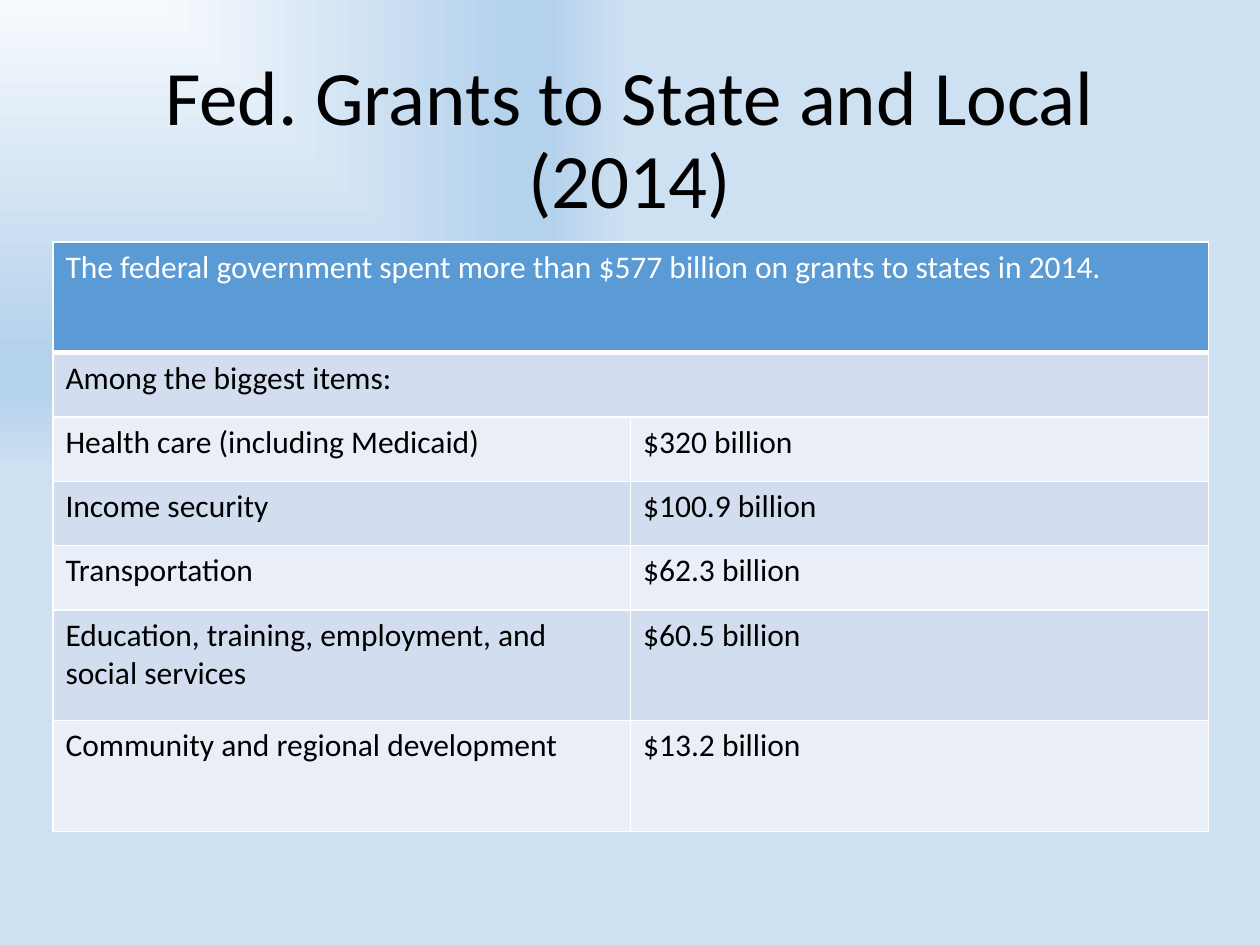
from lxml import etree
from pptx import Presentation
from pptx.dml.color import RGBColor
from pptx.enum import text
from pptx.oxml import ns
from pptx.util import Inches, Pt

WHITE = RGBColor(0xFF, 0xFF, 0xFF)
BLACK = RGBColor(0, 0, 0)
HEADER = RGBColor(0x5B, 0x9B, 0xD5)
BANDS = RGBColor(0xEA, 0xEF, 0xF7), RGBColor(0xD2, 0xDE, 0xEF)
GLOW = [
    (0, RGBColor(0xF7, 0xFA, 0xFD)),
    (74, RGBColor(0xB5, 0xD2, 0xEC)),
    (83, RGBColor(0xB5, 0xD2, 0xEC)),
    (100, RGBColor(0xCE, 0xE1, 0xF2)),
]

TITLE = "Fed. Grants to State and Local (2014)"
ROWS = [
    (0.88, "The federal government spent more than $577 billion on grants to states in 2014."),
    (0.51, "Among the biggest items:"),
    (0.51, "Health care (including Medicaid)", "$320 billion"),
    (0.51, "Income security", "$100.9 billion"),
    (0.51, "Transportation", "$62.3 billion"),
    (0.88, "Education, training, employment, and social services", "$60.5 billion"),
    (0.88, "Community and regional development", "$13.2 billion"),
]


def add(parent, tag, **attrs):
    return etree.SubElement(parent, ns.qn(tag), {k: str(v) for k, v in attrs.items()})


class Deck:
    font = "Calibri"

    def __init__(self, width, height):
        self.prs = Presentation()
        self.prs.slide_width, self.prs.slide_height = Inches(width), Inches(height)
        self.s = self.prs.slides.add_slide(self.prs.slide_layouts[5])

    def background(self, stops):
        self.s.background.fill.gradient()
        grad = self.s.element.find(".//" + ns.qn("a:gradFill"))
        for child in list(grad):
            grad.remove(child)
        gs_list = add(grad, "a:gsLst")
        for pos, color in stops:
            add(add(gs_list, "a:gs", pos=pos * 1000), "a:srgbClr", val=color)
        shade = add(grad, "a:path", path="rect")
        add(shade, "a:fillToRect", r=100000, b=100000)

    def put_text(self, tf, words, size, color):
        p = tf.paragraphs[0]
        r = p.add_run()
        r.text = words
        for name, value in {"name": self.font, "size": Pt(size)}.items():
            setattr(r.font, name, value)
        r.font.color.rgb = color
        return p

    def title(self, words, left, top, width, height):
        sp = self.s.shapes.title
        box = {"left": left, "top": top, "width": width, "height": height}
        for name, value in box.items():
            setattr(sp, name, Inches(value))
        tf = sp.text_frame
        frame = {"word_wrap": True, "auto_size": text.MSO_AUTO_SIZE.NONE,
                 "vertical_anchor": text.MSO_ANCHOR.MIDDLE}
        for name, value in frame.items():
            setattr(tf, name, value)
        p = self.put_text(tf, words, 44, BLACK)
        p.alignment, p.line_spacing = text.PP_ALIGN.CENTER, 0.9

    def borders(self, cell, bottom):
        props = cell._tc.get_or_add_tcPr()
        for side, points in {"L": 1, "R": 1, "T": 1, "B": bottom}.items():
            line = add(props, f"a:ln{side}", w=Pt(points))
            add(add(line, "a:solidFill"), "a:srgbClr", val=WHITE)

    def table(self, rows, left, top, width):
        height = sum(row[0] for row in rows)
        tbl = self.s.shapes.add_table(
            len(rows), 2, Inches(left), Inches(top), Inches(width), Inches(height)).table
        for i, (row_height, *words) in enumerate(rows):
            tbl.rows[i].height = Inches(row_height)
            if len(words) == 1:
                tbl.cell(i, 0).merge(tbl.cell(i, 1))
            for cell in tbl.rows[i].cells:
                self.borders(cell, 1 if i else 3)
                cell.fill.solid()
                cell.fill.fore_color.rgb = BANDS[i % 2] if i else HEADER
            for j, word in enumerate(words):
                self.put_text(tbl.cell(i, j).text_frame, word, 18, BLACK if i else WHITE)


def main():
    deck = Deck(10, 7.5)
    deck.background(GLOW)
    deck.table(ROWS, 0.42, 1.92, 9.17)
    deck.title(TITLE, 0.69, 0.4, 8.62, 1.45)
    deck.prs.save("out.pptx")


if __name__ == "__main__":
    main()
